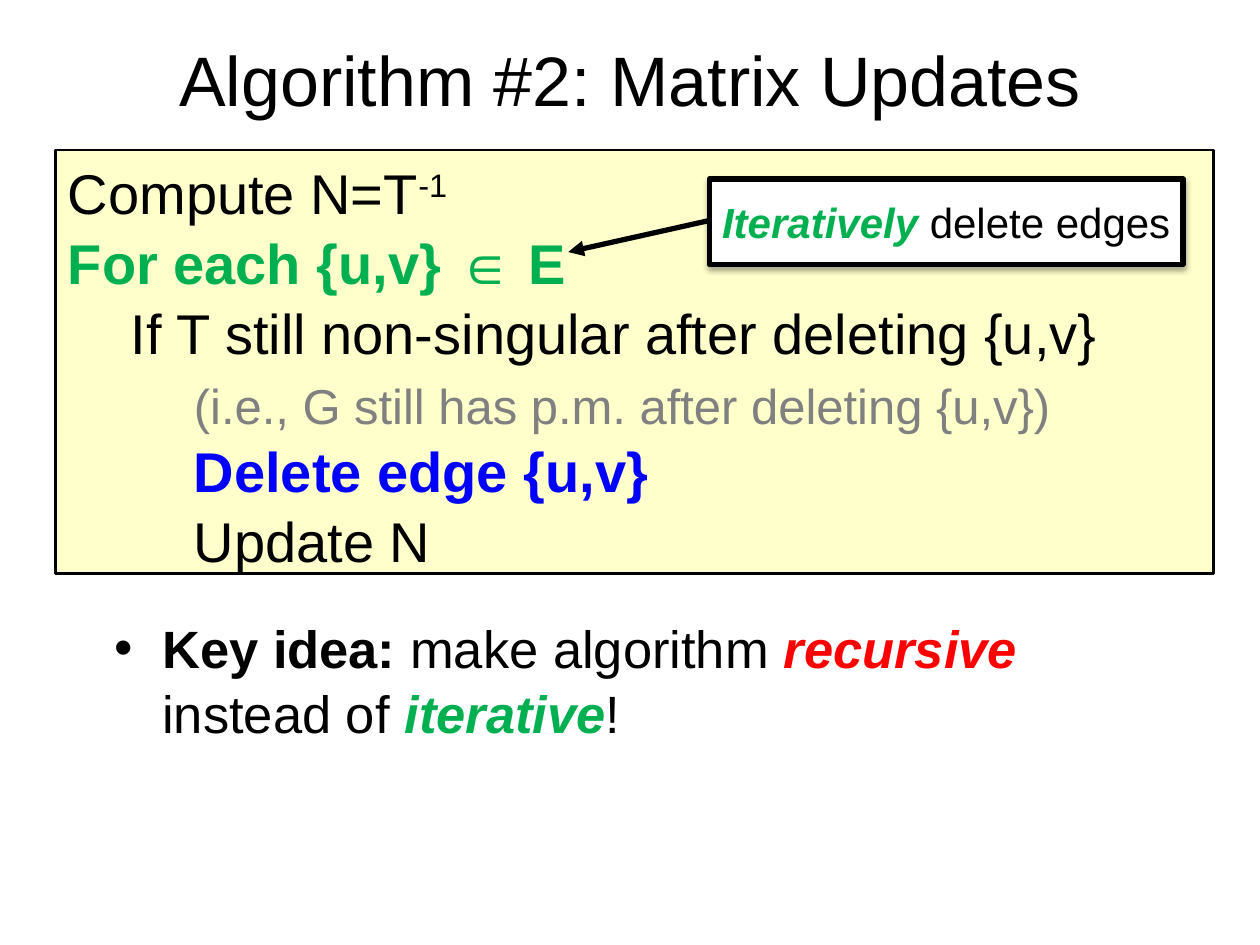
from lxml import etree
from pptx import Presentation
from pptx.dml.color import RGBColor
from pptx.enum.shapes import MSO_CONNECTOR as Connector, MSO_SHAPE as Shape
from pptx.enum.text import MSO_ANCHOR as Anchor, PP_ALIGN as Align
from pptx.oxml.ns import qn
from pptx.util import Inches, Pt

THEME = {
    "font": "Arial",
    "black": "000000", "white": "FFFFFF", "cream": "FFFFCC",
    "green": "00B050", "blue": "0000FF", "red": "FF0000", "grey": "808080",
    "title": 40, "code": 32, "key": 30, "aside": 28, "callout": 24,
    "code_spacing": 1.04,
}
STRONG = {"bold": True}
EMPHASIS = {"bold": True, "italic": True}

# A run is (text, colour, format values); a code line is (indent level, size, runs).
TITLE = [("Algorithm #2: Matrix Updates", "black", {})]
CODE = [
    (0, "code", [("Compute N=T", "black", {}), ("-1", "black", {"baseline": 30})]),
    (0, "code", [("For each {u,v} ∈ E", "green", STRONG)]),
    (1, "code", [("If T still non-singular after deleting {u,v}", "black", {})]),
    (2, "aside", [("(i.e., G still has p.m. after deleting {u,v})", "grey", {})]),
    (2, "code", [("Delete edge {u,v}", "blue", STRONG)]),
    (2, "code", [("Update N", "black", {})]),
]
CALLOUT = [("Iteratively", "green", EMPHASIS), (" delete edges", "black", {})]
KEY_IDEA = [
    ("Key idea:", "black", STRONG), (" make algorithm ", "black", {}),
    ("recursive", "red", EMPHASIS), (" instead of ", "black", {}),
    ("iterative", "green", EMPHASIS), ("!", "black", {}),
]

TITLE_AREA = (0.5, 0.22, 9, 0.8)
CODE_AREA = (0.44, 1.19, 9.19, 3.36)
CALLOUT_AREA = (5.63, 1.42, 3.76, 0.68)
KEY_AREA = (0.81, 4.82, 8.47, 2.3)
ARROW = (5.63, 1.75, 4.51, 2)
CODE_INDENT = 0.5
BULLET_INDENT = 0.38


def colour(name):
    return RGBColor.from_string(THEME[name])


def inches(values):
    return [Inches(value) for value in values]


def add_element(parent, tag, **attributes):
    return etree.SubElement(parent, qn(tag), attributes)


def write_runs(paragraph, runs, size, align=Align.LEFT):
    paragraph.alignment = align
    for text, colour_name, formats in runs:
        run = paragraph.add_run()
        run.text = text
        values = {"name": THEME["font"], "size": Pt(THEME[size]),
                  "bold": False, "italic": False, **formats}
        baseline = values.pop("baseline", None)
        for name, value in values.items():
            setattr(run.font, name, value)
        run.font.color.rgb = colour(colour_name)
        if baseline:
            run.font._element.set("baseline", str(baseline * 1000))


def set_indent(paragraph, left, first=0):
    properties = paragraph._p.get_or_add_pPr()
    properties.set("marL", str(Inches(left)))
    properties.set("indent", str(Inches(first)))
    return properties


def add_box(slide, area, fill, line_width, anchor):
    box = slide.shapes.add_shape(Shape.RECTANGLE, *inches(area))
    box.shadow.inherit = False
    box.fill.solid()
    box.fill.fore_color.rgb = colour(fill)
    box.line.color.rgb = colour("black")
    box.line.width = Pt(line_width)
    box.text_frame.word_wrap = True
    box.text_frame.vertical_anchor = anchor
    return box


def add_title(slide):
    title = slide.shapes.title
    title.left, title.top, title.width, title.height = inches(TITLE_AREA)
    title.text_frame.vertical_anchor = Anchor.MIDDLE
    write_runs(title.text_frame.paragraphs[0], TITLE, "title", Align.CENTER)


def add_code(slide):
    frame = add_box(slide, CODE_AREA, "cream", 1.5, Anchor.TOP).text_frame
    for index, (level, size, runs) in enumerate(CODE):
        paragraph = frame.add_paragraph() if index else frame.paragraphs[0]
        write_runs(paragraph, runs, size)
        paragraph.line_spacing = THEME["code_spacing"]
        if size == "aside":
            # Smaller type keeps the same distance between lines.
            paragraph.space_before = Pt(THEME["code"] - THEME["aside"])
        set_indent(paragraph, level * CODE_INDENT)


def add_callout(slide):
    box = add_box(slide, CALLOUT_AREA, "white", 3, Anchor.MIDDLE)
    box.text_frame.word_wrap = False
    write_runs(box.text_frame.paragraphs[0], CALLOUT, "callout", Align.CENTER)
    effects = box._element.spPr.find(qn("a:effectLst"))
    shadow = add_element(effects, "a:outerShdw", blurRad=str(Pt(3.1)),
                         dist=str(Pt(1.8)), dir="5400000", rotWithShape="0")
    shade = add_element(shadow, "a:srgbClr", val=THEME["black"])
    add_element(shade, "a:alpha", val="35000")


def add_arrow(slide):
    arrow = slide.shapes.add_connector(Connector.STRAIGHT, *inches(ARROW))
    arrow.line.color.rgb = colour("black")
    arrow.line.width = Pt(3)
    add_element(arrow.line._get_or_add_ln(), "a:tailEnd", type="triangle")
    add_element(arrow._element.spPr, "a:effectLst")


def add_key_idea(slide):
    frame = slide.shapes.add_textbox(*inches(KEY_AREA)).text_frame
    frame.word_wrap = True
    paragraph = frame.paragraphs[0]
    write_runs(paragraph, KEY_IDEA, "key")
    paragraph.line_spacing = THEME["code_spacing"]
    paragraph.space_before = Pt(6)
    properties = set_indent(paragraph, BULLET_INDENT, -BULLET_INDENT)
    add_element(properties, "a:buFont", typeface=THEME["font"])
    add_element(properties, "a:buChar", char="•")


def main():
    presentation = Presentation()
    presentation.slide_width, presentation.slide_height = inches((10, 7.5))
    slide = presentation.slides.add_slide(presentation.slide_layouts[5])
    for add_part in (add_title, add_code, add_callout, add_arrow, add_key_idea):
        add_part(slide)
    presentation.save("out.pptx")


if __name__ == "__main__":
    main()
